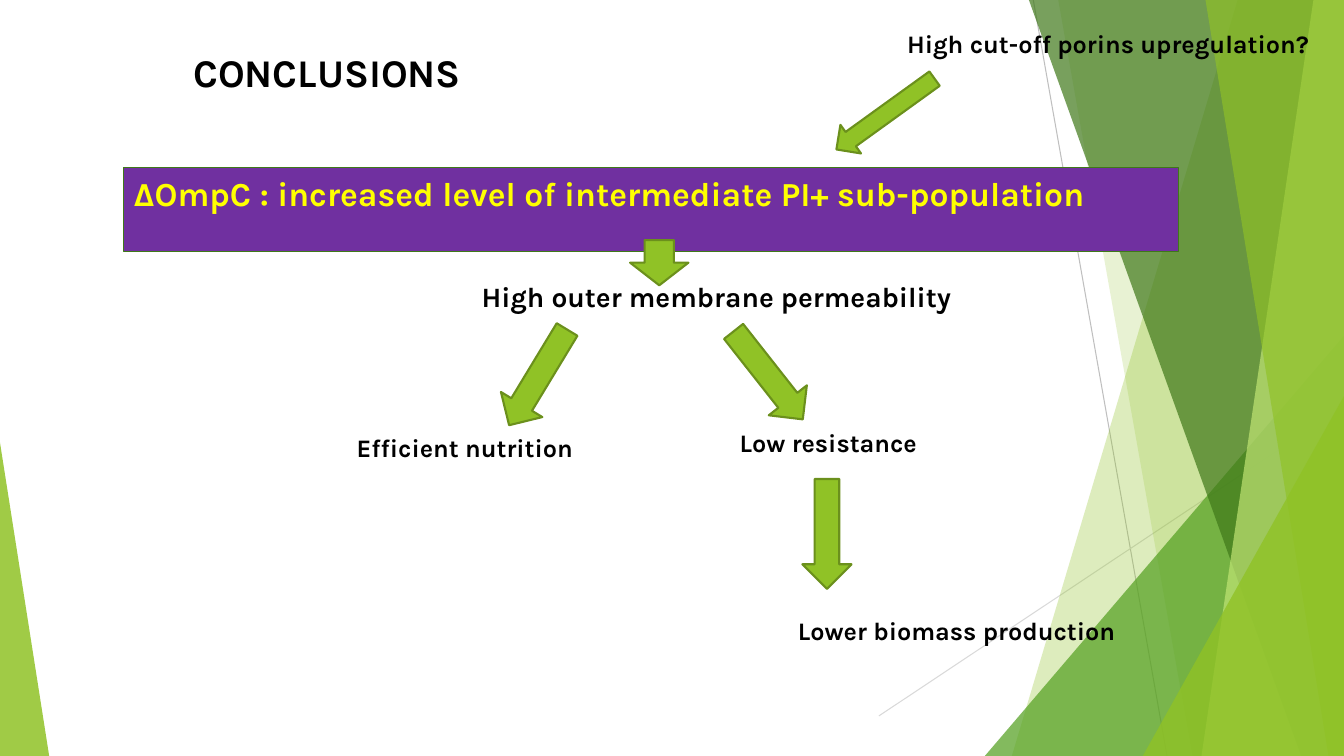
from lxml.etree import SubElement
from pptx import Presentation
from pptx.dml.color import RGBColor
from pptx.enum.shapes import MSO_CONNECTOR as Link, MSO_SHAPE as Kind
from pptx.enum.text import MSO_ANCHOR as Anchor, MSO_AUTO_SIZE as Fit, PP_ALIGN as Align
from pptx.oxml.ns import qn
from pptx.util import Cm, Pt

FONT = "Karla"
WIDE, HIGH = 33.87, 19.05
BLACK = RGBColor(0, 0, 0)
YELLOW = RGBColor(0xFF, 0xFF, 0x00)
PURPLE = RGBColor(0x70, 0x30, 0xA0)
LIME = RGBColor(0x90, 0xC2, 0x26)
OLIVE = RGBColor(0x6B, 0x90, 0x1C)
GREEN = RGBColor(0x54, 0xA0, 0x21)
DARK = RGBColor(0x3F, 0x78, 0x19)
PALE = RGBColor(0xC0, 0xE4, 0x74)
GREY = RGBColor(0xBF, 0xBF, 0xBF)
SILVER = RGBColor(0xD9, 0xD9, 0xD9)


def write(frame, text, size, color=BLACK):
    frame.text = text
    frame.word_wrap = True
    frame.auto_size = Fit.NONE
    frame.vertical_anchor = Anchor.TOP
    line = frame.paragraphs[0]
    line.alignment = Align.LEFT
    font = line.runs[0].font
    font.name, font.size, font.bold = FONT, Pt(size), True
    font.color.rgb = color


def paint(shape, color, edge=None, width=0.75):
    shape.shadow.inherit = False
    shape.fill.solid()
    shape.fill.fore_color.rgb = color
    if edge is None:
        shape.line.fill.background()
    else:
        shape.line.color.rgb = edge
        shape.line.width = Pt(width)


def fade(shape, color, alpha):
    """Fill without outline; alpha is the opacity in percent."""
    paint(shape, color)
    tint = shape.element.spPr.find(qn("a:solidFill"))[0]
    SubElement(tint, qn("a:alpha"), val=str(alpha * 1000))


def add_line(slide, ends, color):
    line = slide.shapes.add_connector(Link.STRAIGHT, *map(Cm, ends))
    line.line.color.rgb = color
    line.line.width = Pt(0.75)
    SubElement(line.element.spPr, qn("a:effectLst"))


def add_band(slide, top, foot, color, alpha):
    """Full-height band from a slanted left edge to the right slide edge."""
    form = slide.shapes.build_freeform(Cm(top), 0)
    form.add_line_segments(
        [(Cm(x), Cm(y)) for x, y in ((WIDE, 0), (WIDE, HIGH), (foot, HIGH))])
    fade(form.convert_to_shape(), color, alpha)


def add_wedge(slide, left, top, width, tip, color, alpha):
    """Triangle standing on the slide's bottom edge; tip 0 is left, 1 right."""
    wedge = slide.shapes.add_shape(
        Kind.ISOSCELES_TRIANGLE, Cm(left), Cm(top), Cm(width), Cm(HIGH - top))
    wedge.adjustments[0] = tip
    fade(wedge, color, alpha)


def add_decor(slide):
    add_line(slide, (26.04, 0, 29.41, HIGH), GREY)
    add_line(slide, (WIDE, 10.24, 22.15, 18.04), SILVER)
    add_band(slide, 31.19, 25.5, LIME, 30)
    add_band(slide, 26.67, 30.05, LIME, 20)
    add_wedge(slide, 24.82, 8.46, 9.05, 1, GREEN, 72)
    add_band(slide, 25.93, 32.79, DARK, 70)
    add_band(slide, 33.1, 30.28, PALE, 70)
    add_band(slide, 30.38, 33.48, LIME, 65)
    add_wedge(slide, 28.8, 9.98, 5.07, 1, LIME, 80)
    add_wedge(slide, 0, 11.15, 1.24, 0, LIME, 85)


def add_title(slide, text):
    title = slide.shapes.title
    title.left, title.top = Cm(4.62), Cm(1.09)
    title.width, title.height = Cm(16.84), Cm(1.45)
    write(title.text_frame, text, 28)


def add_banner(slide, text):
    banner = slide.shapes.add_shape(
        Kind.RECTANGLE, Cm(3.12), Cm(4.22), Cm(26.59), Cm(2.13))
    paint(banner, PURPLE, DARK)
    write(banner.text_frame, text, 24, YELLOW)


def add_label(slide, text, left, top, width, size=18):
    box = slide.shapes.add_textbox(Cm(left), Cm(top), Cm(width), Cm(size * 0.056))
    write(box.text_frame, text, size)


def add_arrow(slide, left, top, width, height, turn=0):
    arrow = slide.shapes.add_shape(
        Kind.DOWN_ARROW, Cm(left), Cm(top), Cm(width), Cm(height))
    arrow.rotation = turn
    paint(arrow, LIME, OLIVE, 1.5)


def main():
    deck = Presentation()
    deck.slide_width, deck.slide_height = Cm(WIDE), Cm(HIGH)
    slide = deck.slides.add_slide(deck.slide_layouts[5])
    add_decor(slide)
    add_title(slide, "CONCLUSIONS")
    add_banner(slide, "ΔOmpC : increased level of intermediate PI+ sub-population")

    add_label(slide, "High cut-off porins upregulation?", 22.61, 0.58, 11.2)
    add_label(slide, "High outer membrane permeability", 11.89, 6.93, 20.57, 20)
    add_label(slide, "Efficient nutrition", 8.74, 10.77, 8.51)
    add_label(slide, "Low resistance", 18.39, 10.64, 8.41)
    add_label(slide, "Lower biomass production", 19.86, 15.39, 9.35)

    add_arrow(slide, 21.87, 1.35, 0.89, 3.05, 54.2)
    add_arrow(slide, 15.88, 6.05, 1.47, 1.14)
    add_arrow(slide, 12.95, 8.1, 1.22, 2.82, 31.2)
    add_arrow(slide, 18.75, 8.05, 1.22, 2.82, 321.8)
    add_arrow(slide, 20.22, 12.07, 1.24, 2.77)
    deck.save("out.pptx")


if __name__ == "__main__":
    main()
